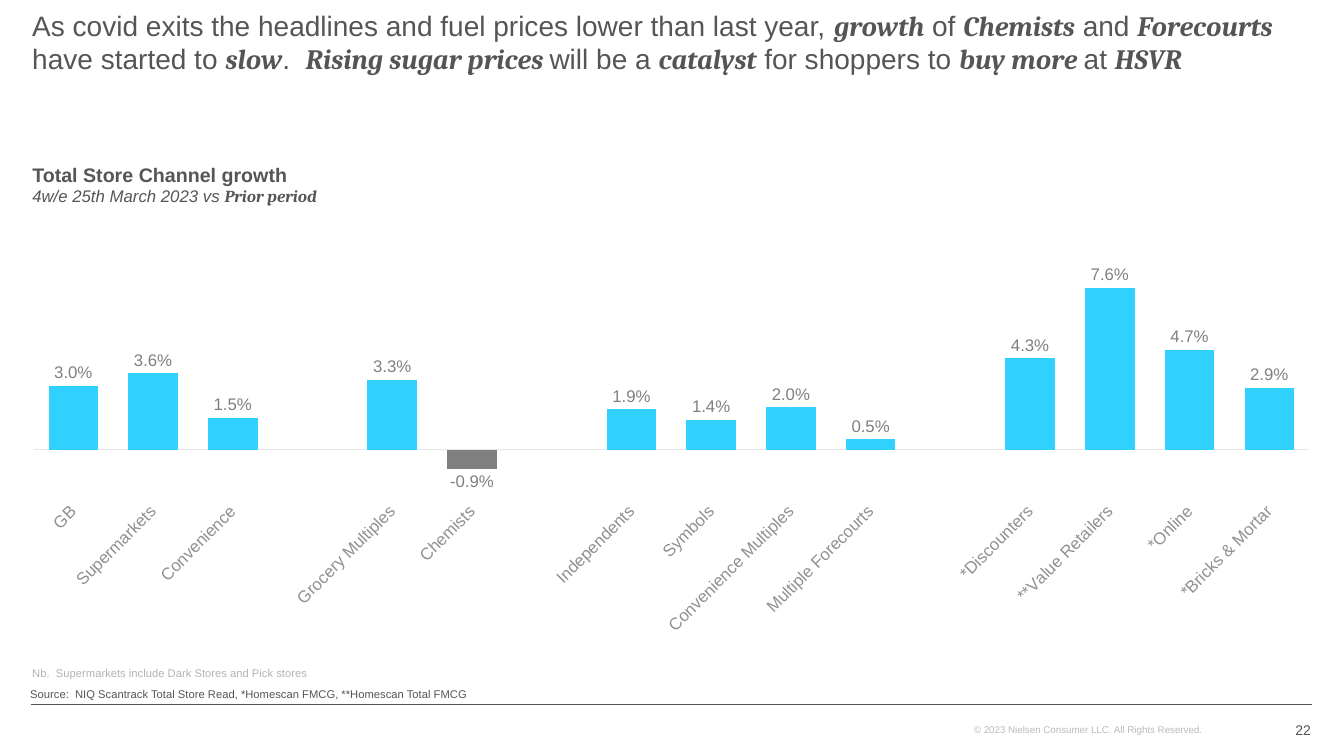
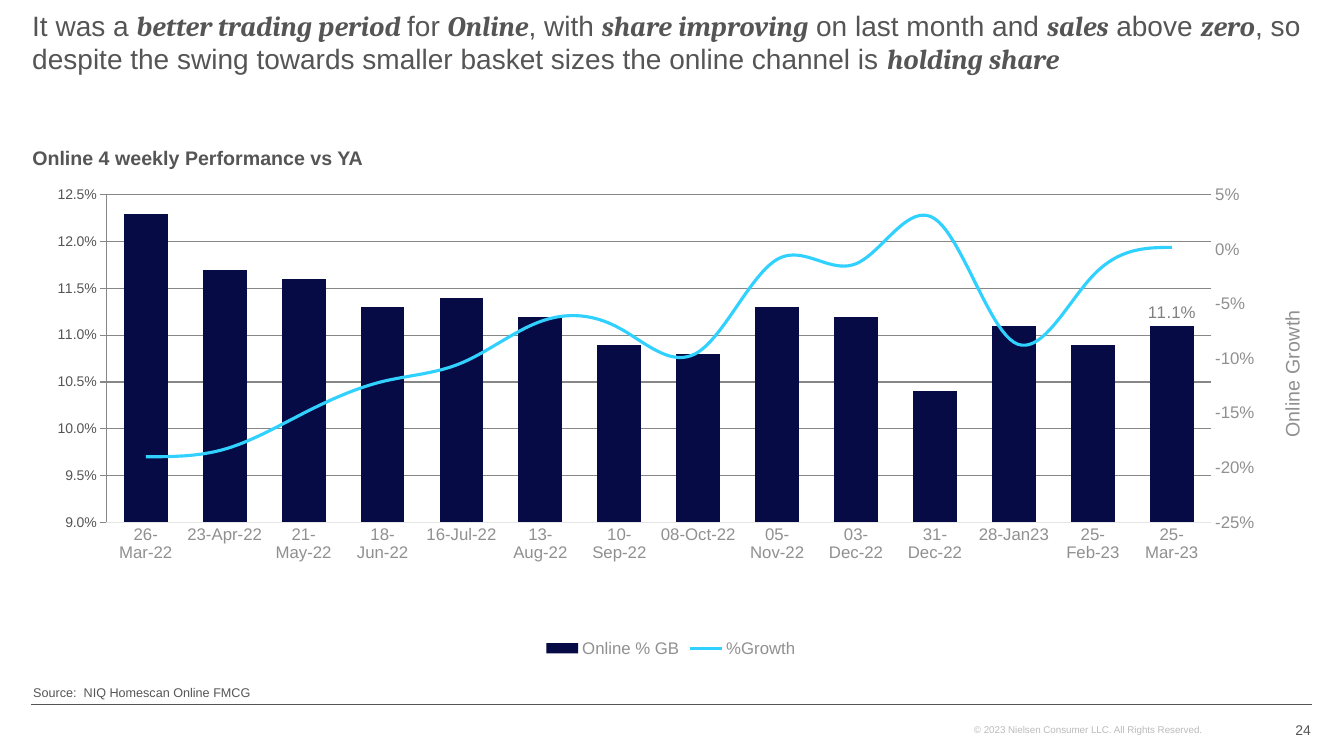
from lxml import etree
from pptx import Presentation
from pptx.chart.axis import ValueAxis
from pptx.chart.data import CategoryChartData
from pptx.dml.color import RGBColor
from pptx.enum.chart import (XL_CHART_TYPE, XL_LABEL_POSITION, XL_LEGEND_POSITION,
                             XL_MARKER_STYLE, XL_TICK_LABEL_POSITION, XL_TICK_MARK)
from pptx.enum.shapes import MSO_CONNECTOR
from pptx.enum.text import MSO_ANCHOR, PP_ALIGN
from pptx.oxml import parse_xml
from pptx.oxml.ns import nsdecls, qn
from pptx.util import Inches, Pt

COLUMNS = XL_CHART_TYPE.COLUMN_CLUSTERED
OUTSIDE_END = XL_LABEL_POSITION.OUTSIDE_END
LEGEND_BOTTOM = XL_LEGEND_POSITION.BOTTOM
NO_MARKER = XL_MARKER_STYLE.NONE
LABELS_LOW = XL_TICK_LABEL_POSITION.LOW
NO_TICK = XL_TICK_MARK.NONE
STRAIGHT = MSO_CONNECTOR.STRAIGHT
TOP, MIDDLE, BOTTOM = MSO_ANCHOR.TOP, MSO_ANCHOR.MIDDLE, MSO_ANCHOR.BOTTOM
LEFT, RIGHT = PP_ALIGN.LEFT, PP_ALIGN.RIGHT

INK = RGBColor(0x55, 0x55, 0x55)
AXIS_GREY = RGBColor(0x90, 0x90, 0x90)
LABEL_GREY = RGBColor(0x80, 0x80, 0x80)
NOTE_GREY = RGBColor(0xB3, 0xB3, 0xB3)
LEGAL_GREY = RGBColor(0xBB, 0xBB, 0xBB)
GRID_GREY = RGBColor(0xE6, 0xE6, 0xE6)
CYAN = RGBColor(0x30, 0xD1, 0xFF)
NAVY = RGBColor(0x06, 0x0A, 0x45)

SANS, SERIF = "Arial", "Cambria"
SLIDE_W, SLIDE_H = 13.33, 7.5
MARGIN = 0.32
CONTENT_W = 12.67
RULE_Y = 6.99
HEADING_W = 4.78

EMPHASIS = {"name": SERIF, "bold": True, "italic": True}
HEADING = {"size": Pt(14), "bold": True}
AXIS_FONT = {"size": Pt(12), "color": AXIS_GREY}
AXIS_TITLE_FONT = {"size": Pt(14), "color": AXIS_GREY, "bold": False}
LABEL_FONT = {"size": Pt(12), "color": LABEL_GREY}

CHANNEL_GROWTH = [
    ("GB", 0.03), ("Supermarkets", 0.036), ("Convenience", 0.015), ("", None),
    ("Grocery Multiples", 0.033), ("Chemists", -0.009), ("", None),
    ("Independents", 0.019), ("Symbols", 0.014), ("Convenience Multiples", 0.02),
    ("Multiple Forecourts", 0.005), ("", None),
    ("*Discounters", 0.043), ("**Value Retailers", 0.076), ("*Online", 0.047),
    ("*Bricks & Mortar", 0.029),
]
ONLINE = [  # period end, share of GB, growth
    ("26-Mar-22", 0.123, -0.19), ("23-Apr-22", 0.117, -0.183),
    ("21-May-22", 0.116, -0.15), ("18-Jun-22", 0.113, -0.121),
    ("16-Jul-22", 0.114, -0.104), ("13-Aug-22", 0.112, -0.066),
    ("10-Sep-22", 0.109, -0.072), ("08-Oct-22", 0.108, -0.094),
    ("05-Nov-22", 0.113, -0.009), ("03-Dec-22", 0.112, -0.013),
    ("31-Dec-22", 0.104, 0.028), ("28-Jan23", 0.111, -0.085),
    ("25-Feb-23", 0.109, -0.024), ("25-Mar-23", 0.111, 0.002),
]


def set_font(font, **values):
    for key, value in {"name": SANS, "color": INK, **values}.items():
        if key == "color":
            font.color.rgb = value
        else:
            setattr(font, key, value)


def add_text(slide, box, lines, anchor=TOP, align=LEFT):
    """Each line is (text, font values); text between bars is emphasised."""
    sp = slide.shapes.add_textbox(*map(Inches, box))
    tf = sp.text_frame
    values = {"word_wrap": True, "vertical_anchor": anchor,
              "margin_left": 0, "margin_right": 0,
              "margin_top": Inches(0.05), "margin_bottom": Inches(0.05)}
    for key, value in values.items():
        setattr(tf, key, value)
    for i, (text, font) in enumerate(lines):
        p = tf.add_paragraph() if i else tf.paragraphs[0]
        p.alignment = align
        for j, part in enumerate(text.split("|")):
            if part:
                r = p.add_run()
                r.text = part
                set_font(r.font, **{**font, **(EMPHASIS if j % 2 else {})})


def add_rule(slide):
    line = slide.shapes.add_connector(
        STRAIGHT, Inches(0.31), Inches(RULE_Y), Inches(13.01), Inches(RULE_Y))
    line.line.color.rgb = INK
    line.line.width = Pt(1)
    etree.SubElement(line.element.spPr, qn("a:effectLst"))


def add_frame(prs, number, title, source, source_at, source_size, title_w=CONTENT_W):
    """Add a slide with its title, source line, rule and footer."""
    slide = prs.slides.add_slide(prs.slide_layouts[6])
    add_rule(slide)
    add_text(slide, (9.66, 7.13, 2.84, 0.22),
             [("© 2023 Nielsen Consumer LLC. All Rights Reserved.",
               {"size": Pt(7), "color": LEGAL_GREY})])
    add_text(slide, (12.01, 7.04, 0.99, 0.4),
             [(str(number), {"size": Pt(10)})], MIDDLE, RIGHT)
    add_text(slide, (*source_at, CONTENT_W, 0.48), [(source, {"size": Pt(source_size)})])
    add_text(slide, (MARGIN, 0.2, title_w, 0.43), [(title, {"size": Pt(20)})], MIDDLE)
    return slide


def plot_area(chart):
    return chart.element.xpath("c:chart/c:plotArea")[0]


def set_plot_layout(chart, x, y, w, h):
    """Fix the inner plot area, in shares of the chart's size."""
    area = plot_area(chart)
    for old in area.findall(qn("c:layout")):
        area.remove(old)
    parts = [("layoutTarget", "inner"), ("xMode", "edge"), ("yMode", "edge"),
             ("x", x), ("y", y), ("w", w), ("h", h)]
    inner = "".join(f'<c:{tag} val="{value}"/>' for tag, value in parts)
    area.insert(0, parse_xml(f'<c:layout {nsdecls("c")}><c:manualLayout>{inner}'
                             '</c:manualLayout></c:layout>'))


def add_column_chart(slide, top, height, cats, series, gap, layout):
    data = CategoryChartData(number_format="0.0%")
    data.categories = cats
    for name, values in series:
        data.add_series(name, values)
    frame = slide.shapes.add_chart(
        COLUMNS, *map(Inches, (MARGIN, top, CONTENT_W, height)), data)
    chart = frame.chart
    chart.has_title = False
    chart.has_legend = False
    set_font(chart.font, size=Pt(10))
    chart.plots[0].gap_width = gap
    chart.plots[0].vary_by_categories = False
    set_plot_layout(chart, *layout)
    return chart


def fill_columns(series, color):
    series.invert_if_negative = False
    series.format.fill.solid()
    series.format.fill.fore_color.rgb = color


def style_line(line, color, width):
    line.color.rgb = color
    line.width = Pt(width)


def style_category_axis(axis):
    axis.major_tick_mark = NO_TICK
    axis.has_major_gridlines = False
    style_line(axis.format.line, GRID_GREY, 0.75)
    set_font(axis.tick_labels.font, **AXIS_FONT)


def style_value_axis(axis, low, high, step, title, grid):
    values = {"minimum_scale": low, "maximum_scale": high, "major_unit": step,
              "major_tick_mark": NO_TICK, "has_major_gridlines": grid}
    for key, value in values.items():
        setattr(axis, key, value)
    if grid:
        style_line(axis.major_gridlines.format.line, GRID_GREY, 0.75)
    axis.format.line.fill.background()
    labels = axis.tick_labels
    labels.number_format, labels.number_format_is_linked = "0%", False
    set_font(labels.font, **AXIS_FONT)
    tf = axis.axis_title.text_frame
    tf.text = title
    set_font(tf.paragraphs[0].runs[0].font, **AXIS_TITLE_FONT)
    rotate_text(axis.axis_title.element, -90)


def rotate_text(element, degrees):
    body = element.xpath(".//a:bodyPr")[0]
    body.set("rot", str(degrees * 60000))
    body.set("vert", "horz")


def move_last_series_to_line(chart):
    """Turn the last column series into a line; return it and its right-hand axis."""
    area = plot_area(chart)
    bar = area.find(qn("c:barChart"))
    ser = bar.findall(qn("c:ser"))[-1]
    for tag in ser.findall(qn("c:invertIfNegative")):
        ser.remove(tag)
    line = parse_xml(
        f'<c:lineChart {nsdecls("c")}><c:grouping val="standard"/><c:varyColors val="0"/>'
        '<c:marker val="1"/><c:axId val="5001"/><c:axId val="5002"/></c:lineChart>')
    line.insert(2, ser)
    bar.addnext(line)
    last = area.findall(qn("c:valAx"))[-1]
    for tag, own, other, hidden, side, crosses in (
            ("valAx", 5002, 5001, 0, "r", "max"),
            ("catAx", 5001, 5002, 1, "b", "autoZero")):
        last.addnext(parse_xml(
            f'<c:{tag} {nsdecls("c")}><c:axId val="{own}"/>'
            '<c:scaling><c:orientation val="minMax"/></c:scaling>'
            f'<c:delete val="{hidden}"/><c:axPos val="{side}"/>'
            '<c:majorTickMark val="none"/><c:minorTickMark val="none"/>'
            f'<c:tickLblPos val="nextTo"/><c:crossAx val="{other}"/>'
            f'<c:crosses val="{crosses}"/></c:{tag}>'))
    return chart.plots[1].series[0], ValueAxis(area.findall(qn("c:valAx"))[-1])


def channel_growth_slide(prs):
    slide = add_frame(
        prs, 22,
        "As covid exits the headlines and fuel prices lower than last year, |growth| of "
        "|Chemists| and |Forecourts| have started to |slow|.  |Rising sugar prices |will be "
        "a |catalyst| for shoppers to |buy more |at |HSVR",
        "Source:  NIQ Scantrack Total Store Read, *Homescan FMCG, **Homescan Total FMCG",
        (0.3, 6.77), 8, title_w=12.94)
    add_text(slide, (MARGIN, 1.56, HEADING_W, 0.54),
             [("Total Store Channel growth", HEADING),
              ("4w/e 25th March 2023 vs |Prior period", {"size": Pt(12), "italic": True})],
             MIDDLE)
    cats, values = zip(*CHANNEL_GROWTH)
    chart = add_column_chart(slide, 2.11, 4.34, cats, [("Series 1", values)], 61,
                             (0.001, 0.055, 0.999, 0.585))
    plot = chart.plots[0]
    plot.overlap = -30
    growth = plot.series[0]
    fill_columns(growth, CYAN)
    for i, value in enumerate(values):
        if value is not None and value < 0:
            fill = growth.points[i].format.fill
            fill.solid()
            fill.fore_color.rgb = LABEL_GREY
    labels = growth.data_labels
    formats = {"show_value": True, "position": OUTSIDE_END,
               "number_format": "0.0%", "number_format_is_linked": False}
    for key, value in formats.items():
        setattr(labels, key, value)
    set_font(labels.font, **LABEL_FONT)
    axis = chart.category_axis
    style_category_axis(axis)
    axis.tick_label_position = LABELS_LOW
    rotate_text(axis.tick_labels.font and axis.format.line and chart.element.xpath("//c:catAx/c:txPr")[0], -45)
    axis = chart.value_axis
    axis.minimum_scale, axis.maximum_scale = -0.02, 0.1
    axis.has_major_gridlines = False
    axis.visible = False
    add_text(slide, (MARGIN, 6.55, 2.96, 0.24),
             [("Nb.  Supermarkets include Dark Stores and Pick stores",
               {"size": Pt(8), "color": NOTE_GREY})], BOTTOM)


def online_slide(prs):
    slide = add_frame(
        prs, 24,
        "It was a |better trading period |for |Online|, with |share improving| on last month "
        "and |sales| above |zero|, so despite the swing towards smaller basket sizes the "
        "online channel is |holding share",
        "Source:  NIQ Homescan Online FMCG", (0.33, 6.75), 9)
    cats, share, growth = zip(*ONLINE)
    chart = add_column_chart(slide, 1.84, 4.72, cats,
                             [("Online % GB", share), ("%Growth", growth)], 80,
                             (0.058, 0.02, 0.865, 0.688))
    line, right_axis = move_last_series_to_line(chart)
    style_line(line.format.line, CYAN, 2.25)
    line.smooth = True
    line.marker.style = NO_MARKER
    columns = chart.plots[0].series[0]
    fill_columns(columns, NAVY)
    label = columns.points[len(share) - 1].data_label
    label.position = OUTSIDE_END
    set_font(label.font, **LABEL_FONT)
    columns.data_labels.show_value = False
    style_category_axis(chart.category_axis)
    style_value_axis(chart.value_axis, 0.09, 0.13, 0.01, "Online % GB", grid=True)
    style_value_axis(right_axis, -0.25, 0.05, 0.05, "Online Growth", grid=False)
    chart.has_legend = True
    chart.legend.position = LEGEND_BOTTOM
    chart.legend.include_in_layout = False
    set_font(chart.legend.font, **AXIS_FONT)
    add_text(slide, (MARGIN, 1.39, HEADING_W, 0.34),
             [("Online 4 weekly Performance vs YA", HEADING)], MIDDLE)


def main():
    prs = Presentation()
    prs.slide_width, prs.slide_height = Inches(SLIDE_W), Inches(SLIDE_H)
    channel_growth_slide(prs)
    online_slide(prs)
    prs.save("out.pptx")


if __name__ == "__main__":
    main()
